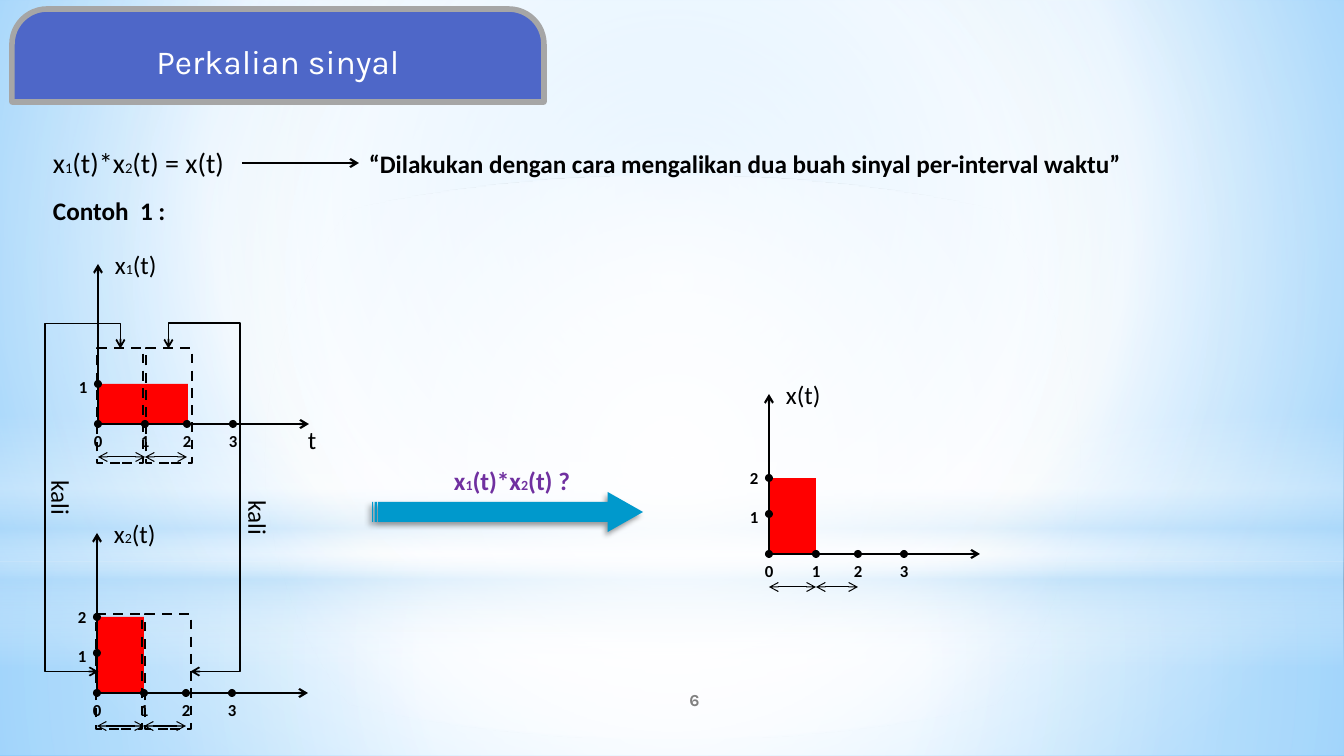
import pptx
import pptx.util
import pptx.dml.color
import pptx.enum.dml
import pptx.enum.shapes
import pptx.enum.text
import pptx.oxml
import pptx.oxml.ns

theme = {
    "ink": "000000", "red": "FF0000", "blue": "4E67C8", "edge": "A6A6A6", "arrow": "0099CC",
    "sky": "B4DCFA", "white": "FFFFFF",
    # font, size, small size, colour, bold
    "title": ("Karla", 24, 24, "FFFFFF", False),
    "sum": ("Calibri", 20, 10.5, "000000", False),
    "lead": ("Calibri", 18, 18, "000000", True),
    "name": ("Calibri", 18, 10, "000000", False),
    "tick": ("Calibri", 12, 12, "000000", True),
    "ask": ("Calibri", 18, 10, "7030A0", True),
    "page": ("Karla", 12, 12, "808080", True),
}
scale = 914400 / 100.8
kinds = pptx.enum.shapes.MSO_SHAPE
links = pptx.enum.shapes.MSO_CONNECTOR
space = pptx.oxml.ns.nsdecls("a")
color = pptx.dml.color.RGBColor.from_string

deck = pptx.Presentation()
deck.slide_width, deck.slide_height = round(1344 * scale), round(756 * scale)
slide = deck.slides.add_slide(deck.slide_layouts[6])


def draw(kind, box, fill=None, edge=None, width=1):
    shape = slide.shapes.add_shape(kind, *(round(n * scale) for n in box))
    shape.shadow.inherit = False
    if fill:
        shape.fill.solid()
        shape.fill.fore_color.rgb = color(fill)
    else:
        shape.fill.background()
    if edge:
        shape.line.color.rgb = color(edge)
        shape.line.width = pptx.util.Pt(width)
    else:
        shape.line.fill.background()
    return shape


def write(shape, words, style, center=False):
    """Fill a shape with text; every second part between bars is set small."""
    font, size, small, ink, bold = theme[style]
    frame = shape.text_frame
    frame.word_wrap = center
    line = frame.paragraphs[0]
    if center:
        frame.vertical_anchor = pptx.enum.text.MSO_ANCHOR.MIDDLE
        line.alignment = pptx.enum.text.PP_ALIGN.CENTER
    else:
        frame.auto_size = pptx.enum.text.MSO_AUTO_SIZE.SHAPE_TO_FIT_TEXT
    for i, part in enumerate(words.split("|")):
        run = line.add_run()
        run.text = part
        run.font.name = font
        run.font.size = pptx.util.Pt(small if i % 2 else size)
        run.font.bold = bold
        run.font.color.rgb = color(ink)


# Backdrop: box (None for the slide itself), stops of place, colour, opacity, and focus
sky, white = theme["sky"], theme["white"]
middle = (50, 50, 50, 50)
layers = [
    (None, [(0, "9ED5FF", 100), (60, white, 100), (100, "5BB9FF", 100)], (20, 10, 20, 60)),
    ((0, 562, 1344, 194), [(0, white, 91), (37, white, 76), (100, sky, 79)], middle),
    ((0, 0, 1344, 562), [(0, white, 89), (48, white, 62), (100, sky, 79)], middle),
    ((0, 415, 1344, 252), [(0, white, 0), (29, white, 30), (45, sky, 40), (55, white, 26),
                           (65, sky, 60), (100, white, 0)], None),
    ((0, 176, 1344, 562), [(0, white, 100), (56, white, 0)], middle),
]
for i, (box, stops, focus) in enumerate(layers):
    if box:
        kind = kinds.OVAL if i == len(layers) - 1 else kinds.RECTANGLE
        flat = draw(kind, box, white).element.spPr.xpath("a:solidFill")[0]
    else:
        slide.background.fill.solid()
        slide.background.fill.fore_color.rgb = color(white)
        flat = slide.element.xpath(".//p:bgPr/a:solidFill")[0]
    marks = "".join(
        f'<a:gs pos="{at * 1000}"><a:srgbClr val="{tone}"><a:alpha val="{alpha * 1000}"/>'
        f'</a:srgbClr></a:gs>' for at, tone, alpha in stops)
    if focus:
        sides = " ".join(f'{side}="{n * 1000}"' for side, n in zip("ltrb", focus))
        way = f'<a:path path="circle"><a:fillToRect {sides}/></a:path>'
    else:
        way = '<a:lin ang="5400000" scaled="0"/>'
    blend = f'<a:gradFill {space} rotWithShape="1"><a:gsLst>{marks}</a:gsLst>{way}</a:gradFill>'
    flat.getparent().replace(flat, pptx.oxml.parse_xml(blend))

# Header
head = draw(kinds.ROUND_2_SAME_RECTANGLE, (12, 9, 532, 93), theme["blue"], theme["edge"], 4)
head.adjustments[0] = 0.379
write(head, "Perkalian sinyal", "title", True)

# Labels: box, words, style, turn; lines: kind, ends, width, arrow at start, bends
labels = [
    ((43, 141, 199, 44), "x|1|(t)*x|2|(t) = x(t)", "sum", 0),
    ((359, 143, 779, 40), "“Dilakukan dengan cara mengalikan dua buah sinyal per-interval waktu”",
     "lead", 0),
    ((43, 190, 134, 40), "Contoh  1 :", "lead", 0),
    ((298, 419, 29, 40), "t", "name", 0),
    ((444, 460, 138, 40), "x|1|(t)*x|2|(t) ?", "ask", 0),
    ((34, 478, 55, 40), "kali", "name", 90),
    ((231, 498, 55, 40), "kali", "name", 90),
]
lines = [
    (links.STRAIGHT, (242, 163, 359, 163), 1.5, False, None),
    (links.ELBOW, (271, 521, -52, 499), 1.25, True, (-7800, 343900)),
    (links.ELBOW, (341, 499, 18, 521), 1.25, True, (-7800, 325000)),
]

# Signals: origin, name, pulse width and level, top of the dashed boxes
ticks = (0, 47, 89, 135)
levels = ((40, 52), (76, 91))
signals = [
    (98, 424, "x|1|(t)", 90, 1, 348),
    (769, 554, "x(t)", 47, 2, None),
    (97, 693, "x|2|(t)", 47, 2, 614),
]
for x, y, name, wide, level, top in signals:
    high = levels[level - 1][0]
    draw(kinds.RECTANGLE, (x, y - high, wide, high), theme["red"])
    dots = [(x + tick, y) for tick in ticks]
    labels.append(((x + 7, y - 180, 62, 40), name, "name", 0))
    for i, tick in enumerate(ticks):
        labels.append(((x + tick - 14, y + 2, 29, 30), str(i), "tick", 0))
    for i, (rise, lift) in enumerate(levels[:level]):
        dots.append((x, y - rise))
        labels.append(((x - 29, y - lift, 29, 30), str(i + 1), "tick", 0))
    for left, base in dots:
        draw(kinds.OVAL, (left - 4, base - 4, 8, 8), theme["ink"])
    lines.append((links.STRAIGHT, (x, y, x, y - 160), 1.5, False, None))
    lines.append((links.STRAIGHT, (x, y, x + 211, y), 1.5, False, None))
    for start, end in zip(ticks[:2], ticks[1:3]):
        lines.append((links.STRAIGHT, (x + start, y + 33, x + end, y + 33), 0.75, True, None))
    if top:
        for left in (x - 1, x + 48):
            dash = draw(kinds.RECTANGLE, (left, top, 46, 115), None, theme["ink"], 1.75)
            dash.line.dash_style = pptx.enum.dml.MSO_LINE.DASH

# Big arrow
arrow = draw(kinds.STRIPED_RIGHT_ARROW, (372, 492, 271, 40), theme["arrow"])
arrow.adjustments[0], arrow.adjustments[1] = 0.5, 0.882
shade = arrow.element.spPr.xpath("a:effectLst")[0]
shade.append(pptx.oxml.parse_xml(
    f'<a:outerShdw {space} blurRad="50800" dist="38100" dir="8100000" algn="tr" rotWithShape="0">'
    '<a:srgbClr val="000000"><a:alpha val="40000"/></a:srgbClr></a:outerShdw>'))

for kind, ends, width, both, bends in lines:
    link = slide.shapes.add_connector(kind, *(round(n * scale) for n in ends))
    link.line.color.rgb = color(theme["ink"])
    link.line.width = pptx.util.Pt(width)
    props = link.element.spPr
    for end in ("head", "tail") if both else ("tail",):
        link.line._ln.append(pptx.oxml.parse_xml(f'<a:{end}End {space} type="arrow"/>'))
    props.append(pptx.oxml.parse_xml(f"<a:effectLst {space}/>"))
    if bends:
        props.xpath("a:xfrm")[0].set("rot", "16200000")
        shape = props.xpath("a:prstGeom")[0]
        shape.set("prst", "bentConnector4")
        guides = "".join(f'<a:gd name="adj{i}" fmla="val {n}"/>' for i, n in enumerate(bends, 1))
        shape.replace(shape[0], pptx.oxml.parse_xml(f"<a:avLst {space}>{guides}</a:avLst>"))

labels.append(((560, 680, 269, 40), "6", "page", 0))
for box, words, style, turn in labels:
    label = slide.shapes.add_textbox(*(round(n * scale) for n in box))
    label.rotation = turn
    write(label, words, style, style == "page")

deck.save("out.pptx")
